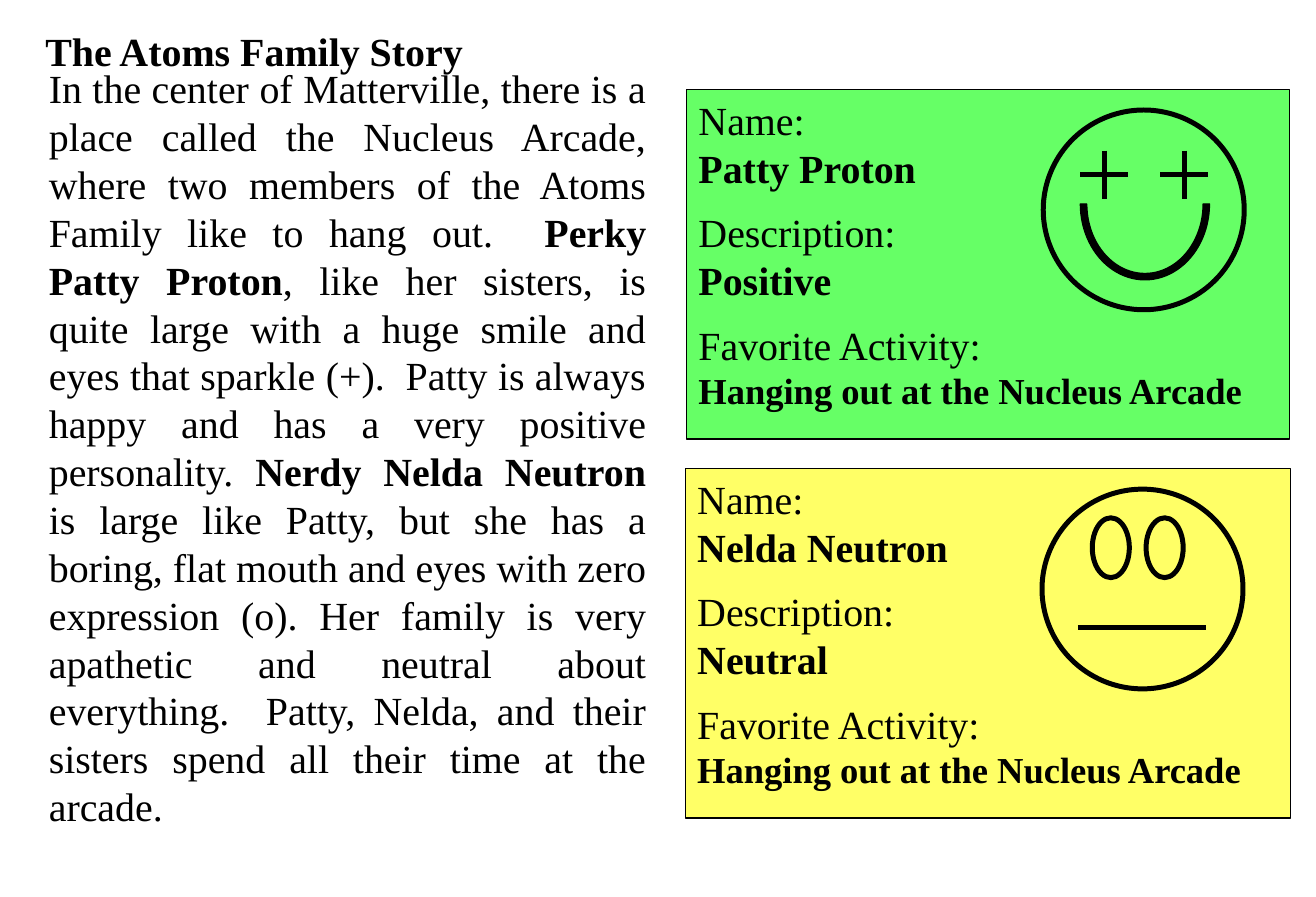
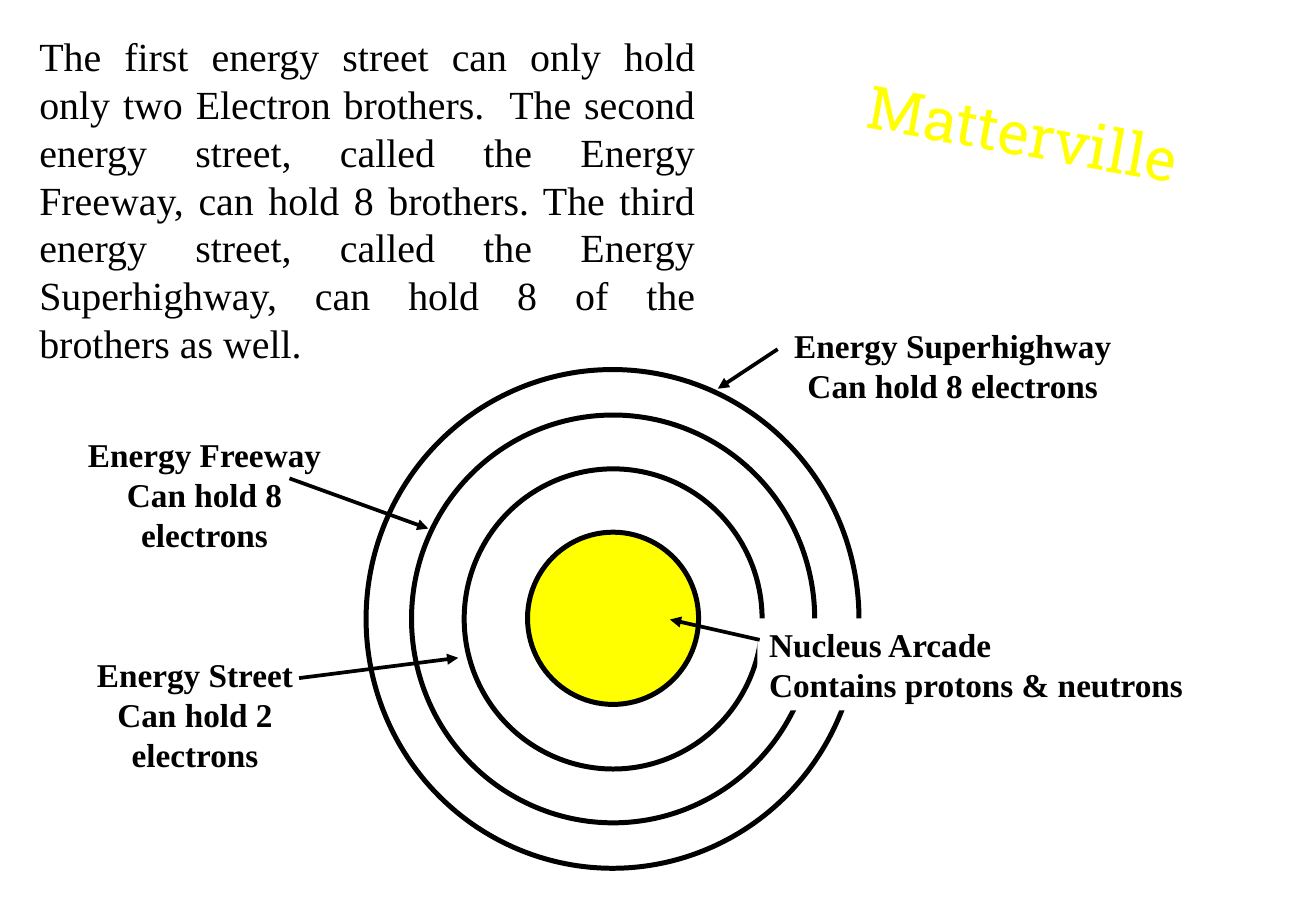
from lxml.etree import SubElement
from pptx import Presentation
from pptx.dml.color import RGBColor
from pptx.enum.shapes import MSO_CONNECTOR, MSO_SHAPE
from pptx.enum.text import MSO_ANCHOR, MSO_AUTO_SIZE, PP_ALIGN
from pptx.oxml.ns import qn
from pptx.util import Pt

PX = 9144  # 100 px to the inch
BLACK = RGBColor(0x00, 0x00, 0x00)
WHITE = RGBColor(0xFF, 0xFF, 0xFF)
YELLOW = RGBColor(0xFF, 0xFF, 0x00)
PALE_YELLOW = RGBColor(0xFF, 0xFF, 0x66)
GREEN = RGBColor(0x66, 0xFF, 0x66)
BODY_FONT = "Times New Roman"
SIGN_FONT = "Roboto Slab"


def add_text(shape, paragraphs, size=24, bold=False, color=BLACK, font=BODY_FONT,
             align=PP_ALIGN.LEFT, anchor=MSO_ANCHOR.TOP, wrap=True, grow=False):
    """Fill a shape with paragraphs, each a list of (text, changes) runs.

    Changes may hold size, bold and the paragraph's space before.
    """
    frame = shape.text_frame
    frame.word_wrap = wrap
    frame.vertical_anchor = anchor
    frame.auto_size = MSO_AUTO_SIZE.SHAPE_TO_FIT_TEXT if grow else MSO_AUTO_SIZE.NONE
    for index, runs in enumerate(paragraphs):
        paragraph = frame.add_paragraph() if index else frame.paragraphs[0]
        paragraph.alignment = align
        for text, changes in runs:
            if "before" in changes:
                paragraph.space_before = Pt(changes["before"])
            for line_number, line in enumerate(text.split("\n")):
                if line_number:
                    paragraph.add_line_break()
                run = paragraph.add_run()
                run.text = line
                run.font.name = font
                run.font.size = Pt(changes.get("size", size))
                run.font.bold = changes.get("bold", bold)
                run.font.color.rgb = color


def style(item, width=3, fill=None, arrow=False):
    """Give a shape or connector a plain black line, an optional fill and no shadow."""
    if fill is not None:
        item.fill.solid()
        item.fill.fore_color.rgb = fill
    if width:
        item.line.color.rgb = BLACK
        item.line.width = Pt(width)
    else:
        item.line.fill.background()
    if arrow:
        SubElement(item.line._get_or_add_ln(), qn("a:tailEnd"), type="triangle")
    SubElement(item._element.spPr, qn("a:effectLst"))


presentation = Presentation()
presentation.slide_width = 1100 * PX
presentation.slide_height = 750 * PX
blank = presentation.slide_layouts[6]

# Slide 1: the story and two character cards
slide = presentation.slides.add_slide(blank)

story = [
    ("In the center of Matterville, there is a place called the Nucleus Arcade, where two "
     "members of the Atoms Family like to hang out.  ", {}),
    ("Perky Patty Proton", {"bold": True}),
    (", like her sisters, is quite large with a huge smile and eyes that sparkle (+).  Patty "
     "is always happy and has a very positive personality. ", {}),
    ("Nerdy Nelda Neutron", {"bold": True}),
    (" is large like Patty, but she has a boring, flat mouth and eyes with zero expression "
     "(o). Her family is very apathetic and neutral about everything.  Patty, Nelda, and "
     "their sisters spend all their time at the arcade.", {}),
]
story_box = slide.shapes.add_textbox(31 * PX, 49 * PX, 519 * PX, 649 * PX)
add_text(story_box, [story], align=PP_ALIGN.JUSTIFY, anchor=MSO_ANCHOR.MIDDLE, grow=True)

title_box = slide.shapes.add_textbox(28 * PX, 17 * PX, 559 * PX, 50 * PX)
add_text(title_box, [[("The Atoms Family Story", {})]], bold=True, grow=True)

card_groups = []
for name, description, color, left, top, width in [
    ("Nelda Neutron", "Neutral", PALE_YELLOW, 573, 392, 506),
    ("Patty Proton", "Positive", GREEN, 574, 75, 504),
]:
    shapes = slide.shapes.add_group_shape().shapes
    card_groups.append(shapes)
    card = shapes.add_shape(MSO_SHAPE.RECTANGLE, left * PX, top * PX, width * PX, 292 * PX)
    style(card, width=0.75, fill=color)
    add_text(card, [
        [("Name:", {})],
        [(name, {"bold": True})],
        [("Description:", {"before": 10})],
        [(description, {"bold": True})],
        [("Favorite Activity:", {"before": 10})],
        [("Hanging out at the Nucleus Arcade", {"size": 22, "bold": True})],
    ])
    face = shapes.add_shape(MSO_SHAPE.OVAL, (left + 298) * PX, (top + 17) * PX,
                            168 * PX, 167 * PX)
    style(face, fill=color)

nelda_shapes, patty_shapes = card_groups
for eye_left in (913, 958):
    eye = nelda_shapes.add_shape(MSO_SHAPE.OVAL, eye_left * PX, 433 * PX, 31 * PX, 50 * PX)
    style(eye)
    eye.fill.background()

smile = patty_shapes.add_shape(MSO_SHAPE.BLOCK_ARC, 903 * PX, 107 * PX, 108 * PX, 127 * PX)
smile.adjustments[2] = 0.05
smile.rotation = 180
style(smile, width=0.75, fill=BLACK)

face_lines = [(nelda_shapes, 901, 525, 1008, 525)]  # flat mouth
for eye_x in (923, 990):
    face_lines.append((patty_shapes, eye_x, 126, eye_x, 166))
    face_lines.append((patty_shapes, eye_x - 20, 146, eye_x + 20, 146))
for shapes, *ends in face_lines:
    style(shapes.add_connector(MSO_CONNECTOR.STRAIGHT, *[end * PX for end in ends]))

# Slide 2: the map of Matterville
slide = presentation.slides.add_slide(blank)

streets_box = slide.shapes.add_textbox(23 * PX, 20 * PX, 568 * PX, 293 * PX)
streets = ("The first energy street can only hold only two Electron brothers.  The second "
           "energy street, called the Energy Freeway, can hold 8 brothers. The third energy "
           "street, called the Energy Superhighway, can hold 8 of the brothers as well.")
add_text(streets_box, [[(streets, {})]], align=PP_ALIGN.JUSTIFY,
         anchor=MSO_ANCHOR.MIDDLE, grow=True)

sign = slide.shapes.add_textbox(675 * PX, 75 * PX, 350 * PX, 125 * PX)
sign.rotation = 10.2
add_text(sign, [[("Matterville", {})]], size=36, color=YELLOW, font=SIGN_FONT,
         align=PP_ALIGN.CENTER, wrap=False)

ring_shapes = slide.shapes.add_group_shape().shapes
center_x, center_y = 512, 517
for width, height, fill in [(412, 417, WHITE), (337, 341, WHITE),
                            (249, 251, WHITE), (143, 144, YELLOW)]:
    ring = ring_shapes.add_shape(
        MSO_SHAPE.OVAL, (center_x - width // 2) * PX, (center_y - height // 2) * PX,
        width * PX, height * PX)
    style(ring, fill=fill)

for text, align, box, arrow_ends in [
    ("Nucleus Arcade\nContains protons & neutrons", PP_ALIGN.LEFT,
     (633, 517, 382, 77), (635, 535, 560, 518)),
    ("Energy Freeway Can hold 8 electrons", PP_ALIGN.CENTER,
     (50, 358, 242, 110), (242, 400, 358, 442)),
    ("Energy Superhighway Can hold 8 electrons", PP_ALIGN.CENTER,
     (650, 267, 293, 77), (650, 292, 600, 325)),
    ("Energy Street\nCan hold 2 electrons", PP_ALIGN.CENTER,
     (42, 542, 242, 110), (250, 567, 383, 550)),
]:
    shapes = slide.shapes.add_group_shape().shapes
    label = shapes.add_shape(MSO_SHAPE.RECTANGLE, *[length * PX for length in box])
    style(label, width=0, fill=WHITE)
    add_text(label, [[(text, {})]], size=20, bold=True, align=align, grow=True)
    pointer = shapes.add_connector(MSO_CONNECTOR.STRAIGHT, *[end * PX for end in arrow_ends])
    style(pointer, width=2.25, arrow=True)

presentation.save("out.pptx")
